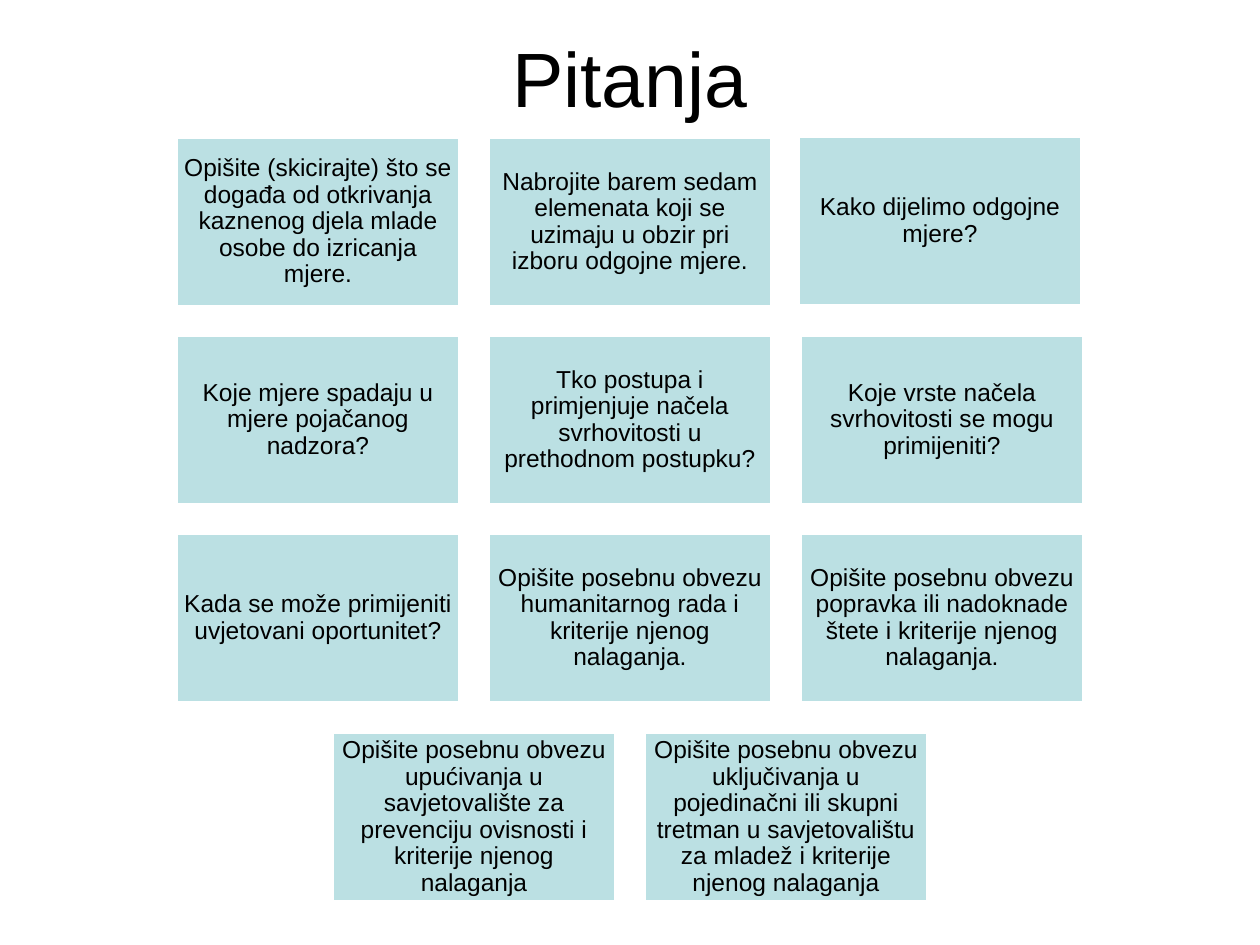
import pptx
import pptx.util
import pptx.dml.color
import pptx.enum.shapes
import pptx.enum.text

BLACK = pptx.dml.color.RGBColor(0x00, 0x00, 0x00)
WHITE = pptx.dml.color.RGBColor(0xFF, 0xFF, 0xFF)
TEAL = pptx.dml.color.RGBColor(0xBB, 0xE0, 0xE3)

WIDE, HIGH = 1260, 945
BOX_W, BOX_H = 284, 170
GAP = 28
TOP = 137
INSET = 7

ROWS = [
    ["Opišite (skicirajte) što se događa od otkrivanja kaznenog djela mlade osobe do izricanja mjere.",
     "Nabrojite barem sedam elemenata koji se uzimaju u obzir pri izboru odgojne mjere.",
     "Kako dijelimo odgojne mjere?"],
    ["Koje mjere spadaju u mjere pojačanog nadzora?",
     "Tko postupa i primjenjuje načela svrhovitosti u prethodnom postupku?",
     "Koje vrste načela svrhovitosti se mogu primijeniti?"],
    ["Kada se može primijeniti uvjetovani oportunitet?",
     "Opišite posebnu obvezu humanitarnog rada i kriterije njenog nalaganja.",
     "Opišite posebnu obvezu popravka ili nadoknade štete i kriterije njenog nalaganja."],
    ["Opišite posebnu obvezu upućivanja u savjetovalište za prevenciju ovisnosti i kriterije njenog nalaganja",
     "Opišite posebnu obvezu uključivanja u pojedinačni ili skupni tretman u savjetovalištu "
     "za mladež i kriterije njenog nalaganja"],
]
NUDGE = {(0, 2): (-2, -1)}


def px(num):
    return pptx.util.Emu(round(num * 914400 / 126))


def apply(item, form):
    for name, value in form.items():
        setattr(item, name, value)


def write(shape, text, size, space, inset):
    frame = shape.text_frame
    frame.text = text
    apply(frame, {
        "word_wrap": True,
        "auto_size": pptx.enum.text.MSO_AUTO_SIZE.NONE,
        "vertical_anchor": pptx.enum.text.MSO_ANCHOR.MIDDLE,
        "margin_left": px(inset), "margin_right": px(inset),
        "margin_top": px(inset), "margin_bottom": px(inset),
    })
    para = frame.paragraphs[0]
    apply(para, {"alignment": pptx.enum.text.PP_ALIGN.CENTER, "line_spacing": space})
    font = para.runs[0].font
    apply(font, {"name": "Arial", "size": pptx.util.Pt(size)})
    font.color.rgb = BLACK


def add_title(slide, text):
    title = slide.shapes.title
    apply(title, {"left": px(63), "top": px(38), "width": px(1134), "height": px(78)})
    write(title, text, 44, 1.0, INSET)


def add_box(slide, left, top, text):
    box = slide.shapes.add_shape(pptx.enum.shapes.MSO_SHAPE.RECTANGLE,
                                 px(left), px(top), px(BOX_W), px(BOX_H))
    box.shadow.inherit = False
    box.fill.solid()
    box.fill.fore_color.rgb = TEAL
    box.line.color.rgb = WHITE
    box.line.width = pptx.util.Pt(2)
    write(box, text, 14, 0.9, INSET)


def add_grid(slide):
    for row, texts in enumerate(ROWS):
        count = len(texts)
        start = (WIDE - count * BOX_W - (count - 1) * GAP) // 2
        for col, text in enumerate(texts):
            dx, dy = NUDGE.get((row, col), (0, 0))
            left = start + col * (BOX_W + GAP) + dx
            top = TOP + row * 595 // 3 + dy
            add_box(slide, left, top, text)


def main():
    deck = pptx.Presentation()
    apply(deck, {"slide_width": px(WIDE), "slide_height": px(HIGH)})
    slide = deck.slides.add_slide(deck.slide_layouts[5])
    add_title(slide, "Pitanja")
    add_grid(slide)
    deck.save("out.pptx")


if __name__ == "__main__":
    main()
